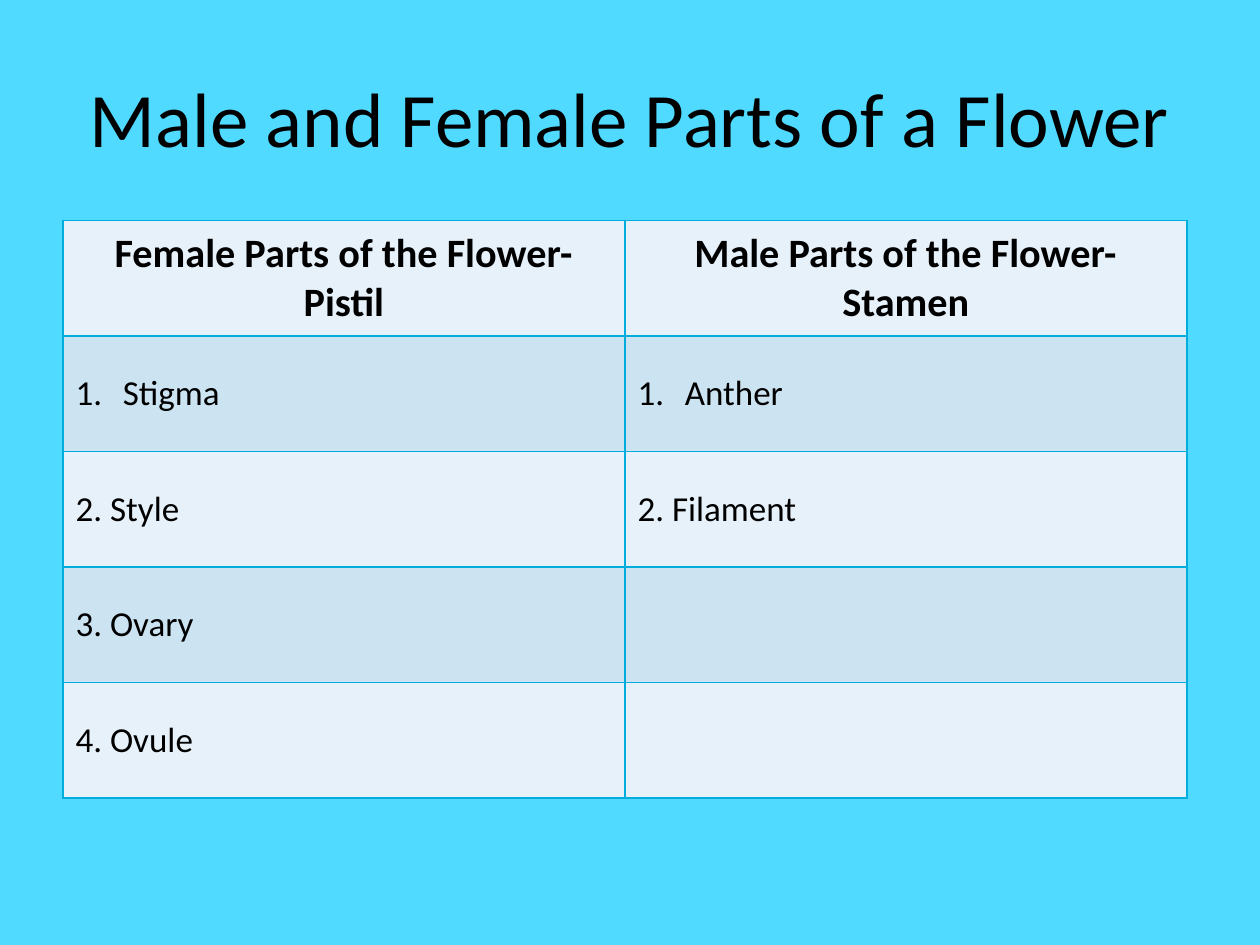
"""Build a slide with a table of the female and male parts of a flower."""
import pptx
import pptx.dml.color
import pptx.enum.text
import pptx.oxml
import pptx.oxml.ns
import pptx.util

Pt = pptx.util.Pt
RGB = pptx.dml.color.RGBColor
ALIGN = pptx.enum.text.PP_ALIGN
MIDDLE = pptx.enum.text.MSO_ANCHOR.MIDDLE
NAMESPACE = pptx.oxml.ns.nsdecls("a")

COLORS = {
    "background": "51DAFF",
    "text": "000000",
    "border": "00ADDC",
    "light": "E7F1F9",
    "dark": "CCE3F2",
}
ROWS = [
    ("Female Parts of the Flower- Pistil", "Male Parts of the Flower- Stamen"),
    ("Stigma", "Anther"),
    ("2. Style", "2. Filament"),
    ("3. Ovary", ""),
    ("4. Ovule", ""),
]
NUMBERED_ROW = 1


def write_text(text_frame, text, size, bold=False, align=ALIGN.LEFT, numbered=False):
    """Write one formatted paragraph, numbered on request."""
    paragraph = text_frame.paragraphs[0]
    paragraph.text = text
    paragraph.alignment = align
    if numbered:
        properties = paragraph._p.get_or_add_pPr()
        properties.set("marL", str(Pt(27)))
        properties.set("indent", str(-Pt(27)))
        properties.append(pptx.oxml.parse_xml(f'<a:buAutoNum {NAMESPACE} type="arabicPeriod"/>'))
    font = paragraph.runs[0].font if text else paragraph.font
    font.name = "Calibri"
    font.size = Pt(size)
    font.bold = bold
    font.color.rgb = RGB.from_string(COLORS["text"])


def add_borders(cell):
    """Draw a thin line on each side of a cell."""
    properties = cell._tc.get_or_add_tcPr()
    for position, side in enumerate(("lnL", "lnR", "lnT", "lnB")):
        border = pptx.oxml.parse_xml(
            f'<a:{side} {NAMESPACE} w="{Pt(1)}"><a:solidFill>'
            f'<a:srgbClr val="{COLORS["border"]}"/></a:solidFill></a:{side}>'
        )
        properties.insert(position, border)


presentation = pptx.Presentation()
presentation.slide_width = Pt(720)
presentation.slide_height = Pt(540)
slide = presentation.slides.add_slide(presentation.slide_layouts[5])
slide.background.fill.solid()
slide.background.fill.fore_color.rgb = RGB.from_string(COLORS["background"])

title = slide.shapes.title
title.left, title.top, title.width, title.height = Pt(36), Pt(21.6), Pt(648), Pt(90)
title.text_frame.vertical_anchor = MIDDLE
write_text(title.text_frame, "Male and Female Parts of a Flower", size=44, align=ALIGN.CENTER)

table = slide.shapes.add_table(
    len(ROWS), len(ROWS[0]), Pt(36), Pt(126), Pt(642.24), Pt(330)
).table
for row_index, row in enumerate(ROWS):
    is_header = row_index == 0
    for column_index, text in enumerate(row):
        cell = table.cell(row_index, column_index)
        cell.vertical_anchor = MIDDLE
        cell.fill.solid()
        cell.fill.fore_color.rgb = RGB.from_string(COLORS["dark" if row_index % 2 else "light"])
        add_borders(cell)
        write_text(
            cell.text_frame,
            text,
            size=23 if is_header else 20,
            bold=is_header,
            align=ALIGN.CENTER if is_header else ALIGN.LEFT,
            numbered=row_index == NUMBERED_ROW,
        )

presentation.save("out.pptx")
